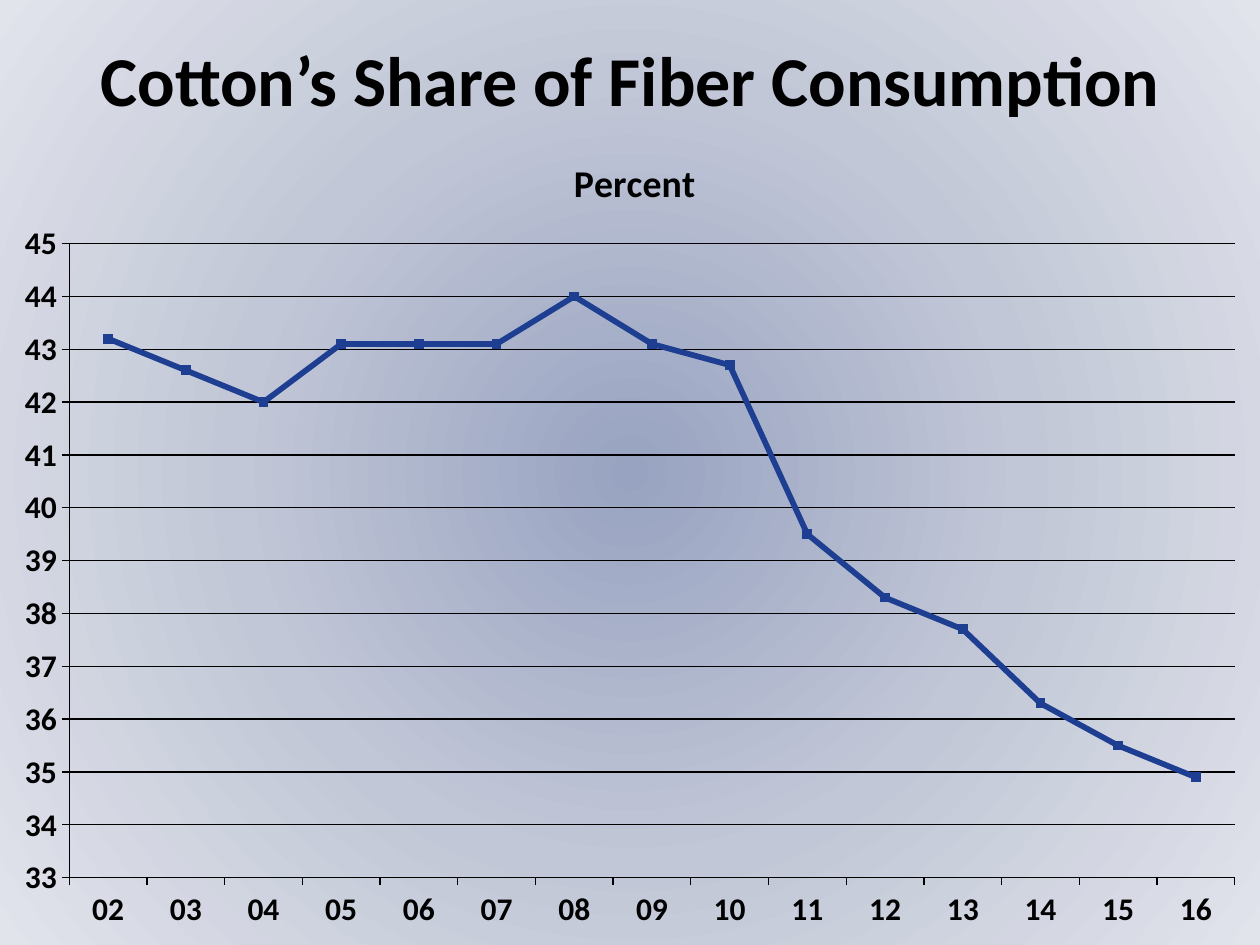
import pptx
import pptx.chart.data
import pptx.dml.color
import pptx.enum.chart
import pptx.enum.text
import pptx.oxml
import pptx.oxml.ns
import pptx.util
from pptx.util import Inches, Pt

BLACK = pptx.dml.color.RGBColor(0x00, 0x00, 0x00)
BLUE = pptx.dml.color.RGBColor(0x1E, 0x3E, 0x92)
GRADIENT = [
    (0, pptx.dml.color.RGBColor(0x98, 0xA3, 0xC1)),
    (50, pptx.dml.color.RGBColor(0xC2, 0xC7, 0xD7)),
    (100, pptx.dml.color.RGBColor(0xE1, 0xE4, 0xEB)),
]
FONT = "Calibri"
YEARS = [f"{year:02d}" for year in range(2, 17)]
SHARES = [43.2, 42.6, 42.0, 43.1, 43.1, 43.1, 44.0, 43.1,
          42.7, 39.5, 38.3, 37.7, 36.3, 35.5, 34.9]


def style_font(font, size):
    font.name = FONT
    font.size = Pt(size)
    font.bold = True
    font.color.rgb = BLACK


def style_line(line, color, width):
    line.color.rgb = color
    line.width = Pt(width)


def set_radial_background(slide):
    slide.background.fill.gradient()
    old = slide.element.xpath("./p:cSld/p:bg/p:bgPr/a:gradFill")[0]
    stops = "".join(
        f'<a:gs pos="{pos * 1000}"><a:srgbClr val="{color}"/></a:gs>'
        for pos, color in GRADIENT
    )
    radial = pptx.oxml.parse_xml(
        f'<a:gradFill {pptx.oxml.ns.nsdecls("a")} rotWithShape="1">'
        f'<a:gsLst>{stops}</a:gsLst><a:path path="circle">'
        '<a:fillToRect l="50000" t="50000" r="50000" b="50000"/>'
        '</a:path></a:gradFill>'
    )
    old.getparent().replace(old, radial)


def set_layout(parent, index, target="", **values):
    """Place a chart part by fractions of the chart area."""
    for old in parent.xpath("./c:layout"):
        parent.remove(old)
    inner = f'<c:layoutTarget val="{target}"/>' if target else ""
    inner += '<c:xMode val="edge"/><c:yMode val="edge"/>'
    inner += "".join(f'<c:{key} val="{val}"/>' for key, val in values.items())
    parent.insert(index, pptx.oxml.parse_xml(
        f'<c:layout {pptx.oxml.ns.nsdecls("c")}>'
        f'<c:manualLayout>{inner}</c:manualLayout></c:layout>'
    ))


def add_title(slide, text):
    sp = slide.shapes.title
    sp.left, sp.top = Inches(0.5), Inches(0)
    sp.width, sp.height = Inches(9), Inches(1.25)
    tf = sp.text_frame
    tf.text = text
    tf.vertical_anchor = pptx.enum.text.MSO_ANCHOR.MIDDLE
    p = tf.paragraphs[0]
    p.alignment = pptx.enum.text.PP_ALIGN.CENTER
    style_font(p.font, 40)


def style_axes(chart):
    for axis in (chart.category_axis, chart.value_axis):
        axis.major_tick_mark = pptx.enum.chart.XL_TICK_MARK.OUTSIDE
        axis.minor_tick_mark = pptx.enum.chart.XL_TICK_MARK.NONE
        style_line(axis.format.line, BLACK, 0.75)
        style_font(axis.tick_labels.font, 18)
    axis = chart.value_axis
    axis.minimum_scale, axis.maximum_scale, axis.major_unit = 33, 45, 1
    axis.tick_labels.number_format = "#,##0"
    axis.tick_labels.number_format_is_linked = False
    axis.has_major_gridlines = True
    style_line(axis.major_gridlines.format.line, BLACK, 0.75)


def style_series(series):
    series.smooth = False
    style_line(series.format.line, BLUE, 3.25)
    marker = series.marker
    marker.style = pptx.enum.chart.XL_MARKER_STYLE.SQUARE
    marker.size = 5
    marker.format.fill.solid()
    marker.format.fill.fore_color.rgb = BLUE
    marker.format.line.color.rgb = BLUE


def add_share_chart(slide):
    data = pptx.chart.data.CategoryChartData()
    data.categories = YEARS
    data.add_series("Series 1", SHARES)
    chart = slide.shapes.add_chart(
        pptx.enum.chart.XL_CHART_TYPE.LINE_MARKERS,
        Inches(0), Inches(0.92), Inches(10), Inches(6.58), data,
    ).chart
    style_font(chart.font, 18)
    chart.has_legend = False
    chart.plots[0].vary_by_categories = False

    chart.has_title = True
    tf = chart.chart_title.text_frame
    tf.text = "Percent"
    style_font(tf.paragraphs[0].font, 21.6)

    style_axes(chart)
    style_series(chart.plots[0].series[0])
    root = chart.element if hasattr(chart, "element") else chart._chartSpace
    set_layout(root.xpath("./c:chart/c:title")[0], 1, x=0.45, y=0.04)
    set_layout(root.xpath("./c:chart/c:plotArea")[0], 0, "inner",
               x=0.055, y=0.154, w=0.925, h=0.765)


def main():
    prs = pptx.Presentation()
    prs.slide_width, prs.slide_height = Inches(10), Inches(7.5)
    slide = prs.slides.add_slide(prs.slide_layouts[5])
    set_radial_background(slide)
    add_title(slide, "Cotton’s Share of Fiber Consumption")
    add_share_chart(slide)
    prs.save("out.pptx")


if __name__ == "__main__":
    main()
